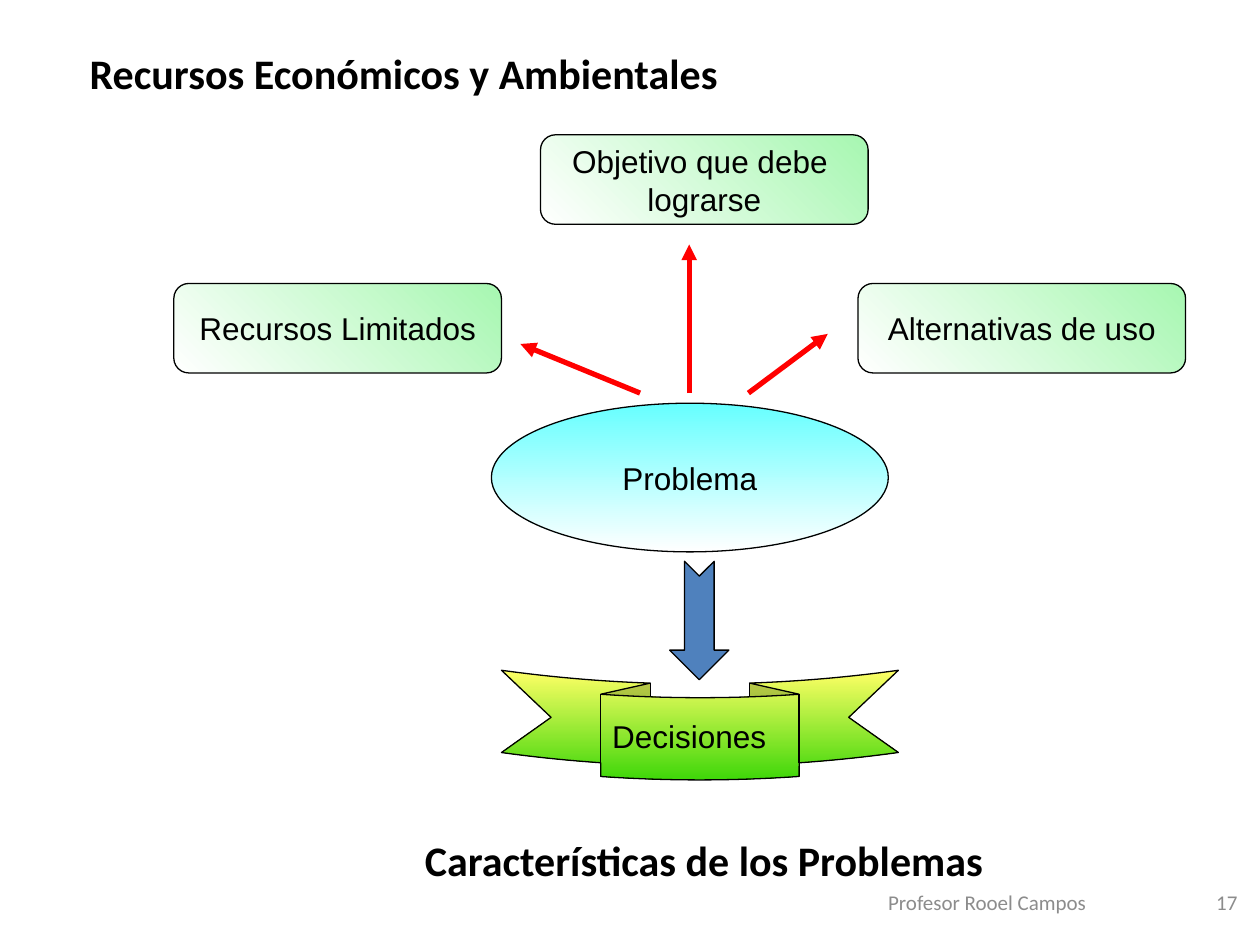
from lxml import etree
from pptx import Presentation
from pptx.dml.color import RGBColor
from pptx.enum.shapes import MSO_CONNECTOR, MSO_SHAPE
from pptx.enum.text import MSO_ANCHOR, PP_ALIGN
from pptx.oxml.ns import qn
from pptx.util import Inches, Pt

STRAIGHT = MSO_CONNECTOR.STRAIGHT
ROUNDED = MSO_SHAPE.ROUNDED_RECTANGLE
OVAL = MSO_SHAPE.OVAL
RIBBON = MSO_SHAPE.CURVED_DOWN_RIBBON
NOTCHED_ARROW = MSO_SHAPE.NOTCHED_RIGHT_ARROW
MIDDLE, TOP = MSO_ANCHOR.MIDDLE, MSO_ANCHOR.TOP
LEFT, CENTER, RIGHT = PP_ALIGN.LEFT, PP_ALIGN.CENTER, PP_ALIGN.RIGHT

BLACK, GRAY, RED, BLUE = "000000", "8C8C8C", "FF0000", "4F81BD"
HEADING = {"size": 24, "font": "Calibri", "bold": True}
LABEL = {"size": 18, "font": "Arial", "wrap": False}
FOOTER = {"size": 12, "font": "Calibri", "color": GRAY}

TITLE = ("Recursos Económicos y Ambientales", (0.16, 0.23, 6.09, 0.69))
RIBBON_AT = (3.98, 5.32, 3.15, 0.87)
PROBLEM = ("Problema", (3.9, 3.2, 3.15, 1.18))
FACTOR_SIZE = (2.6, 0.71)
FACTORS = [
    (["Recursos Limitados"], (1.38, 2.25)),
    (["Objetivo que debe ", "lograrse"], (4.29, 1.07)),
    (["Alternativas de uso"], (6.81, 2.25)),
]
ARROW_START_Y = 3.12
ARROWS = [(5.08, (4.13, 2.73)), (5.94, (6.57, 2.65)), (5.47, (5.47, 1.94))]
DOWN_ARROW_AT = (5.08, 4.69, 0.94, 0.47)
TEXTS = [
    (["Decisiones"], (4.76, 5.64, 1.42, 0.4), LEFT, TOP, LABEL),
    (["Características de los Problemas "], (2.58, 6.48, 6.09, 0.69), CENTER, MIDDLE, HEADING),
    (["Profesor Rooel Campos"], (6.25, 6.9, 3.17, 0.52), CENTER, MIDDLE, FOOTER),
    (["17"], (9.42, 6.9, 0.5, 0.52), RIGHT, MIDDLE, FOOTER),
]


def rgb(value):
    """Return the colour for a hex string."""
    return RGBColor.from_string(value)


def inches(values):
    """Convert plain numbers to lengths."""
    return [Inches(value) for value in values]


def write(shape, lines, align, anchor, size, font, color=BLACK, bold=False, wrap=True):
    """Fill a shape with one paragraph for each line."""
    frame = shape.text_frame
    frame.word_wrap = wrap
    frame.vertical_anchor = anchor
    frame.text = "\n".join(lines)
    for para in frame.paragraphs:
        para.alignment = align
        para.font.size = Pt(size)
        para.font.name = font
        para.font.bold = bold
        para.font.color.rgb = rgb(color)


def add_outlined(slide, kind, at):
    """Add a preset shape with a thin black outline and no shadow."""
    shape = slide.shapes.add_shape(kind, *inches(at))
    shape.shadow.inherit = False
    shape.line.color.rgb = rgb(BLACK)
    shape.line.width = Pt(0.75)
    return shape


def shade(shape, colors, angle):
    """Give a shape a two-colour gradient, angle counted counterclockwise."""
    shape.fill.gradient()
    shape.fill.gradient_angle = angle
    for stop, color, position in zip(shape.fill.gradient_stops, colors, (0, 1)):
        stop.color.rgb = rgb(color)
        stop.position = position


def add_arrow(slide, start, end):
    """Add a red straight arrow."""
    arrow = slide.shapes.add_connector(STRAIGHT, *inches(start + end))
    arrow.line.color.rgb = rgb(RED)
    arrow.line.width = Pt(3)
    etree.SubElement(arrow.line._get_or_add_ln(), qn("a:tailEnd"), type="triangle")
    etree.SubElement(arrow._element.spPr, qn("a:effectLst"))


def main():
    """Build the slide and save the deck."""
    deck = Presentation()
    deck.slide_width, deck.slide_height = inches((10, 7.5))
    slide = deck.slides.add_slide(deck.slide_layouts[5])

    text, at = TITLE
    title = slide.shapes.title
    title.left, title.top, title.width, title.height = inches(at)
    write(title, [text], CENTER, MIDDLE, **HEADING)

    ribbon = add_outlined(slide, RIBBON, RIBBON_AT)
    for index, value in enumerate((0.25, 0.5, 0.125)):
        ribbon.adjustments[index] = value
    shade(ribbon, ("FFFF66", "3FD709"), 270)

    text, at = PROBLEM
    problem = add_outlined(slide, OVAL, at)
    shade(problem, ("66FFFF", "FFFFFF"), 270)
    write(problem, [text], CENTER, MIDDLE, **LABEL)

    for lines, corner in FACTORS:
        factor = add_outlined(slide, ROUNDED, corner + FACTOR_SIZE)
        shade(factor, ("FFFFFF", "A7F7B1"), 45)
        write(factor, lines, CENTER, MIDDLE, **LABEL)

    for start_x, end in ARROWS:
        add_arrow(slide, (start_x, ARROW_START_Y), end)

    down_arrow = add_outlined(slide, NOTCHED_ARROW, DOWN_ARROW_AT)
    down_arrow.rotation = 90
    down_arrow.fill.solid()
    down_arrow.fill.fore_color.rgb = rgb(BLUE)

    for lines, at, align, anchor, style in TEXTS:
        box = slide.shapes.add_textbox(*inches(at))
        write(box, lines, align, anchor, **style)

    deck.save("out.pptx")


if __name__ == "__main__":
    main()
